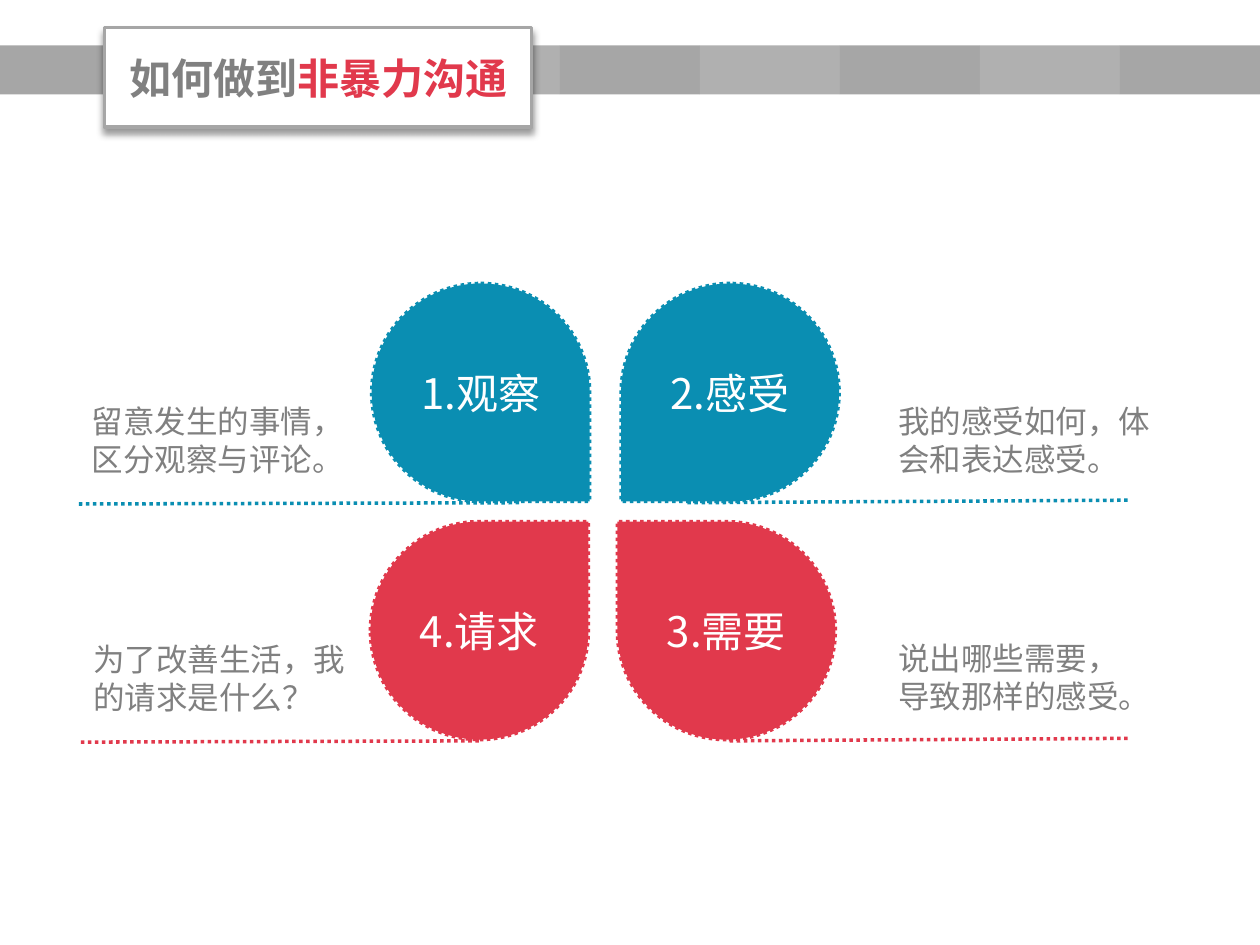
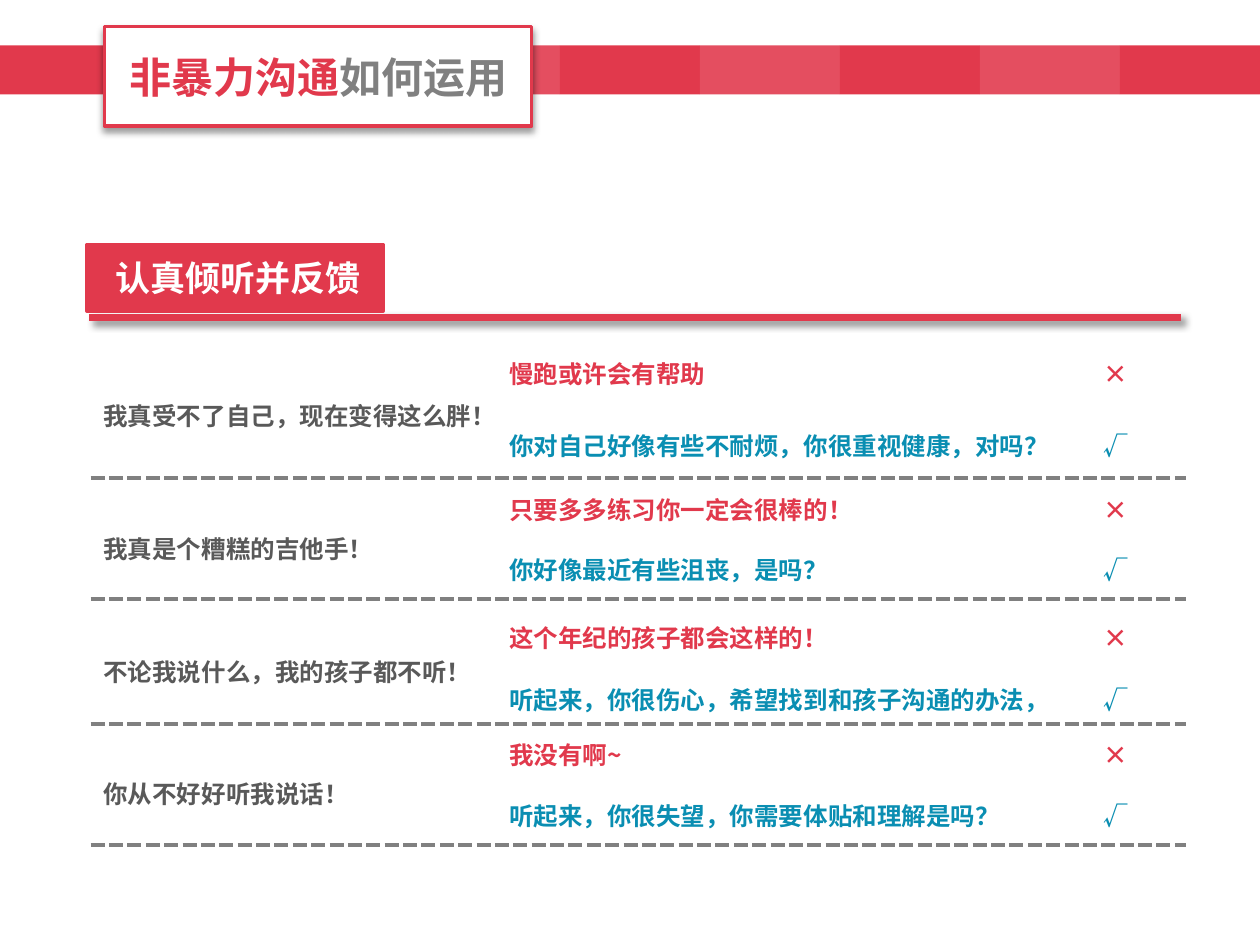
"""Build two slides on nonviolent communication."""
from lxml import etree
from pptx import Presentation
from pptx.dml.color import RGBColor
from pptx.enum.dml import MSO_LINE
from pptx.enum.shapes import MSO_CONNECTOR, MSO_SHAPE
from pptx.enum.text import MSO_ANCHOR, MSO_AUTO_SIZE, PP_ALIGN
from pptx.oxml.ns import qn
from pptx.util import Inches, Pt

FONT = "Noto Sans CJK SC"
COLORS = {
    "red": "E1394C",
    "light red": "E44E60",
    "blue": "0A8EB2",
    "silver": "A6A6A6",
    "light silver": "B0B0B0",
    "gray": "808080",
    "dark": "595959",
    "white": "FFFFFF",
    "black": "000000",
}
PETALS = [
    ("1.观察", 2.95, 2.25, "blue", 90, "vert270", False),
    ("2.感受", 4.93, 2.25, "blue", 270, "vert", True),
    ("3.需要", 4.9, 4.14, "red", 270, "vert", False),
    ("4.请求", 2.94, 4.14, "red", 0, "horz", False),
]
NOTES = [
    (["留意发生的事情，区分观察与评论。"], 0.63, 3.14),
    (["我的感受如何，体会和表达感受。"], 7.03, 3.14),
    (["说出哪些需要，", "导致那样的感受。"], 7.03, 5.02),
    (["为了改善生活，我的请求是什么？"], 0.64, 5.03),
]
DOTTED_LINES = [
    ((4.12, 3.99), (0.62, 4), "blue"),
    ((8.95, 3.97), (5.45, 3.99), "blue"),
    ((8.95, 5.86), (5.77, 5.88), "red"),
    ((3.8, 5.88), (0.63, 5.89), "red"),
]
DIALOGUES = [
    ("我真受不了自己，现在变得这么胖！", "慢跑或许会有帮助",
     "你对自己好像有些不耐烦，你很重视健康，对吗？"),
    ("我真是个糟糕的吉他手！", "只要多多练习你一定会很棒的！",
     "你好像最近有些沮丧，是吗？"),
    ("不论我说什么，我的孩子都不听！", "这个年纪的孩子都会这样的！",
     "听起来，你很伤心，希望找到和孩子沟通的办法，"),
    ("你从不好好听我说话！", "我没有啊~",
     "听起来，你很失望，你需要体贴和理解是吗？"),
]
COLUMN_WIDTHS = [3.22, 4.72, 0.75]
ROW_HEIGHTS = [0.62, 0.48, 0.48, 0.48, 0.59, 0.4, 0.48, 0.48]


def rgb(color):
    return RGBColor.from_string(COLORS[color])


def format_span(span, size, color, bold=False):
    span.font.name = FONT
    span.font.size = Pt(size)
    span.font.bold = bold
    span.font.color.rgb = rgb(color)
    properties = span.font._element
    east_asian = etree.Element(qn("a:ea"), typeface=FONT)
    properties.find(qn("a:latin")).addnext(east_asian)


def write(frame, lines, size, color, bold=False, align=PP_ALIGN.LEFT):
    frame.text = "\n".join(lines)
    for para in frame.paragraphs:
        para.alignment = align
        for span in para.runs:
            format_span(span, size, color, bold)


def set_effects(shape, shadow_angle=None):
    effects = etree.SubElement(shape._element.spPr, qn("a:effectLst"))
    if shadow_angle is not None:
        shadow = etree.SubElement(
            effects, qn("a:outerShdw"), blurRad=str(Pt(4)), dist=str(Pt(3)),
            dir=str(shadow_angle * 60000), algn="tl", rotWithShape="0")
        tint = etree.SubElement(shadow, qn("a:srgbClr"), val=COLORS["black"])
        etree.SubElement(tint, qn("a:alpha"), val="40000")


def paint(shape, fill, line=None, dash=None, shadow_angle=None):
    shape.fill.solid()
    shape.fill.fore_color.rgb = rgb(fill)
    if line:
        shape.line.color.rgb = rgb(line)
        shape.line.width = Pt(2)
        if dash:
            shape.line.dash_style = dash
    else:
        shape.line.fill.background()
    set_effects(shape, shadow_angle)


def add_box(slide, kind, left, top, width, height):
    return slide.shapes.add_shape(
        kind, Inches(left), Inches(top), Inches(width), Inches(height))


def add_line(slide, start, end, color, width, dash=None, shadow_angle=None):
    points = [Inches(value) for value in (*start, *end)]
    line = slide.shapes.add_connector(MSO_CONNECTOR.STRAIGHT, *points)
    line.line.color.rgb = rgb(color)
    line.line.width = Pt(width)
    if dash:
        line.line.dash_style = dash
    set_effects(line, shadow_angle)


def add_header(slide, title_parts, theme, top):
    step = 10 / 9
    for index in (0, *range(3, 9)):
        band = add_box(slide, MSO_SHAPE.RECTANGLE, index * step, 0.36, step, 0.39)
        paint(band, f"light {theme}" if index % 2 else theme)
    title = slide.shapes.title
    title.left, title.top = Inches(0.83), Inches(top)
    title.width, title.height = Inches(3.39), Inches(0.79)
    paint(title, "white", theme, shadow_angle=90)
    frame = title.text_frame
    frame.auto_size = MSO_AUTO_SIZE.NONE
    frame.vertical_anchor = MSO_ANCHOR.MIDDLE
    para = frame.paragraphs[0]
    para.alignment = PP_ALIGN.CENTER
    for text, color in title_parts:
        span = para.add_run()
        span.text = text
        format_span(span, 24, color, bold=True)
    slide.shapes._spTree.append(title._element)


def add_petal(slide, text, left, top, color, rotation, direction, flipped):
    petal = add_box(slide, MSO_SHAPE.TEAR, left, top, 1.73, 1.73)
    petal.rotation = rotation
    if flipped:
        petal._element.spPr.find(qn("a:xfrm")).set("flipH", "1")
    paint(petal, color, color, MSO_LINE.ROUND_DOT)
    frame = petal.text_frame
    frame.margin_left = frame.margin_right = 0
    frame.margin_top = frame.margin_bottom = 0
    frame.vertical_anchor = MSO_ANCHOR.MIDDLE
    frame._txBody.bodyPr.set("vert", direction)
    write(frame, [text], 24, "white", align=PP_ALIGN.CENTER)


def add_note(slide, lines, left, top):
    box = slide.shapes.add_textbox(
        Inches(left), Inches(top), Inches(2.3), Inches(0.71))
    box.text_frame.word_wrap = True
    write(box.text_frame, lines, 18, "gray")


def set_borders(cell, dashed_sides):
    properties = cell._tc.get_or_add_tcPr()
    for side in "LRTB":
        border = etree.SubElement(properties, qn(f"a:ln{side}"), w=str(Pt(2.25)))
        if side in dashed_sides:
            fill = etree.SubElement(border, qn("a:solidFill"))
            etree.SubElement(fill, qn("a:srgbClr"), val=COLORS["gray"])
            etree.SubElement(border, qn("a:prstDash"), val="sysDash")
        else:
            etree.SubElement(border, qn("a:noFill"))


def fill_cell(cell, text, color):
    cell.vertical_anchor = MSO_ANCHOR.MIDDLE
    write(cell.text_frame, [text], 14, color, bold=True)


def add_dialogue_table(slide):
    table = slide.shapes.add_table(
        len(ROW_HEIGHTS), len(COLUMN_WIDTHS), Inches(0.72), Inches(2.65),
        Inches(sum(COLUMN_WIDTHS)), Inches(sum(ROW_HEIGHTS))).table
    table.first_row = table.horz_banding = False
    for column, width in zip(table.columns, COLUMN_WIDTHS):
        column.width = Inches(width)
    for index, height in enumerate(ROW_HEIGHTS):
        table.rows[index].height = Inches(height)
        for column in range(len(COLUMN_WIDTHS)):
            cell = table.cell(index, column)
            sides = "B" if index % 2 or column == 0 else ""
            if index % 2 == 0 and index > 0:
                sides += "T"
            set_borders(cell, sides)
            cell.fill.background()
    for index, (remark, poor_reply, good_reply) in enumerate(DIALOGUES):
        top = index * 2
        table.cell(top, 0).merge(table.cell(top + 1, 0))
        fill_cell(table.cell(top, 0), remark, "dark")
        table.cell(top, 0).text_frame.paragraphs[0].line_spacing = 1.5
        replies = [(poor_reply, "×", "red"), (good_reply, "√", "blue")]
        for row, (reply, mark, color) in enumerate(replies, top):
            fill_cell(table.cell(row, 1), reply, color)
            fill_cell(table.cell(row, 2), mark, color)


def add_section_label(slide, text):
    label = add_box(slide, MSO_SHAPE.RECTANGLE, 0.69, 1.94, 2.35, 0.53)
    paint(label, "red", "red")
    label.text_frame.margin_left = Inches(0.15)
    label.text_frame.vertical_anchor = MSO_ANCHOR.MIDDLE
    write(label.text_frame, [text], 20, "white", bold=True, align=PP_ALIGN.CENTER)


def build_steps_slide(slide):
    add_header(slide, [("如何做到", "gray"), ("非暴力沟通", "red")], "silver", 0.22)
    for petal in PETALS:
        add_petal(slide, *petal)
    for note in NOTES:
        add_note(slide, *note)
    for start, end, color in DOTTED_LINES:
        add_line(slide, start, end, color, 2, MSO_LINE.ROUND_DOT)


def build_practice_slide(slide):
    add_header(slide, [("非暴力沟通", "red"), ("如何运用", "gray")], "red", 0.21)
    add_line(slide, (0.71, 2.52), (9.37, 2.52), "red", 4.5, shadow_angle=45)
    add_dialogue_table(slide)
    add_section_label(slide, "认真倾听并反馈")


def main():
    deck = Presentation()
    deck.slide_width, deck.slide_height = Inches(10), Inches(7.5)
    title_only = deck.slide_layouts[5]
    for build in (build_steps_slide, build_practice_slide):
        build(deck.slides.add_slide(title_only))
    deck.save("out.pptx")


if __name__ == "__main__":
    main()
